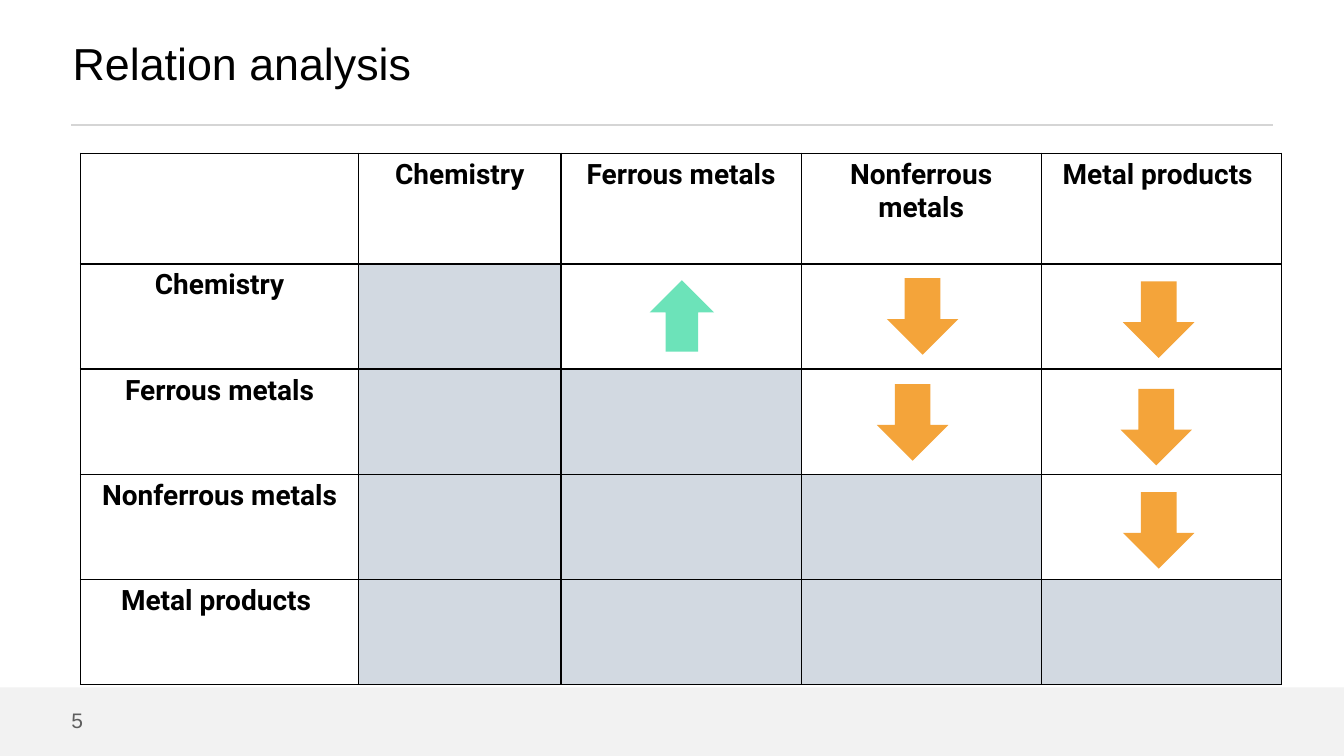
from lxml.etree import SubElement as Sub
from pptx import Presentation
from pptx.dml.color import RGBColor
from pptx.enum.shapes import MSO_CONNECTOR as Conn, MSO_SHAPE as Kind
from pptx.enum.text import MSO_ANCHOR as Anchor, PP_ALIGN as Align
from pptx.oxml.ns import qn
from pptx.util import Cm, Pt

BLACK = RGBColor(0x00, 0x00, 0x00)
WHITE = RGBColor(0xFF, 0xFF, 0xFF)
RULE = RGBColor(0xD5, 0xD5, 0xD5)
BAND = RGBColor(0xF2, 0xF2, 0xF2)
GREY = RGBColor(0x5E, 0x5E, 0x5E)
SHADE = RGBColor(0xD2, 0xD9, 0xE1)
GREEN = RGBColor(0x6C, 0xE3, 0xB9)
AMBER = RGBColor(0xF4, 0xA4, 0x3A)

METALS = ["Chemistry", "Ferrous metals", "Nonferrous metals", "Metal products "]
WIDTHS = [7.01, 5.1, 6.05, 6.05, 6.05]
HEIGHTS = [2.79] + [2.65] * 4
FALLS = [(22.35, 7.01), (28.3, 7.09), (22.1, 9.68), (28.24, 9.8), (28.3, 12.4)]


def write(frame, text, size=20, font="Arial", color=BLACK, bold=False, align=Align.LEFT):
    para = frame.paragraphs[0]
    para.alignment = align
    run = para.add_run()
    run.text = text
    run.font.size = Pt(size)
    run.font.name = font
    run.font.bold = bold
    run.font.color.rgb = color


def edge(cell):
    props = cell._tc.get_or_add_tcPr()
    for place, side in enumerate(("a:lnL", "a:lnR", "a:lnT", "a:lnB")):
        line = props.makeelement(qn(side), {"w": str(Pt(1))})
        fill = Sub(line, qn("a:solidFill"))
        Sub(fill, qn("a:srgbClr"), val=str(BLACK))
        props.insert(place, line)


class Page:
    def __init__(self, deck):
        self.shapes = deck.slides.add_slide(deck.slide_layouts[6]).shapes

    def rule(self, left, top, right):
        line = self.shapes.add_connector(Conn.STRAIGHT, Cm(left), Cm(top), Cm(right), Cm(top))
        line.line.color.rgb = RULE
        line.line.width = Pt(1.5)
        Sub(line._element.spPr, qn("a:effectLst"))

    def shape(self, kind, left, top, width, height, color):
        item = self.shapes.add_shape(kind, Cm(left), Cm(top), Cm(width), Cm(height))
        item.shadow.inherit = False
        item.fill.solid()
        item.fill.fore_color.rgb = color
        item.line.fill.background()

    def label(self, left, top, width, height, text, wrap=True, **style):
        frame = self.shapes.add_textbox(Cm(left), Cm(top), Cm(width), Cm(height)).text_frame
        frame.margin_left = frame.margin_right = frame.margin_top = frame.margin_bottom = 0
        frame.vertical_anchor = Anchor.MIDDLE
        frame.word_wrap = wrap
        write(frame, text, **style)

    def matrix(self, left, top, names):
        count = len(names) + 1
        table = self.shapes.add_table(
            count, count, Cm(left), Cm(top), Cm(sum(WIDTHS)), Cm(sum(HEIGHTS))
        ).table
        table.first_row = table.horz_banding = False
        for col, width in zip(table.columns, WIDTHS):
            col.width = Cm(width)
        for row, height in zip(table.rows, HEIGHTS):
            row.height = Cm(height)
        for row in range(count):
            for col in range(count):
                cell = table.cell(row, col)
                cell.fill.solid()
                cell.fill.fore_color.rgb = SHADE if 0 < col <= row else WHITE
                edge(cell)
                if (row == 0) != (col == 0):
                    write(cell.text_frame, names[row + col - 1], font="Roboto",
                          bold=True, align=Align.CENTER)


def main():
    deck = Presentation()
    deck.slide_width, deck.slide_height = Cm(33.87), Cm(19.05)
    page = Page(deck)
    page.rule(1.8, 3.15, 32.08)
    page.shape(Kind.RECTANGLE, 0, 17.32, 33.87, 1.73, BAND)
    page.label(1.8, 17.83, 0.3, 0.64, "5", wrap=False, size=15, color=GREY)
    page.label(1.83, 0, 25.58, 3.15, "Relation analysis", size=32)
    page.matrix(2.03, 3.86, METALS)
    page.shape(Kind.UP_ARROW, 16.37, 7.06, 1.63, 1.8, GREEN)
    for left, top in FALLS:
        page.shape(Kind.DOWN_ARROW, left, top, 1.8, 1.93, AMBER)
    deck.save("out.pptx")


if __name__ == "__main__":
    main()
